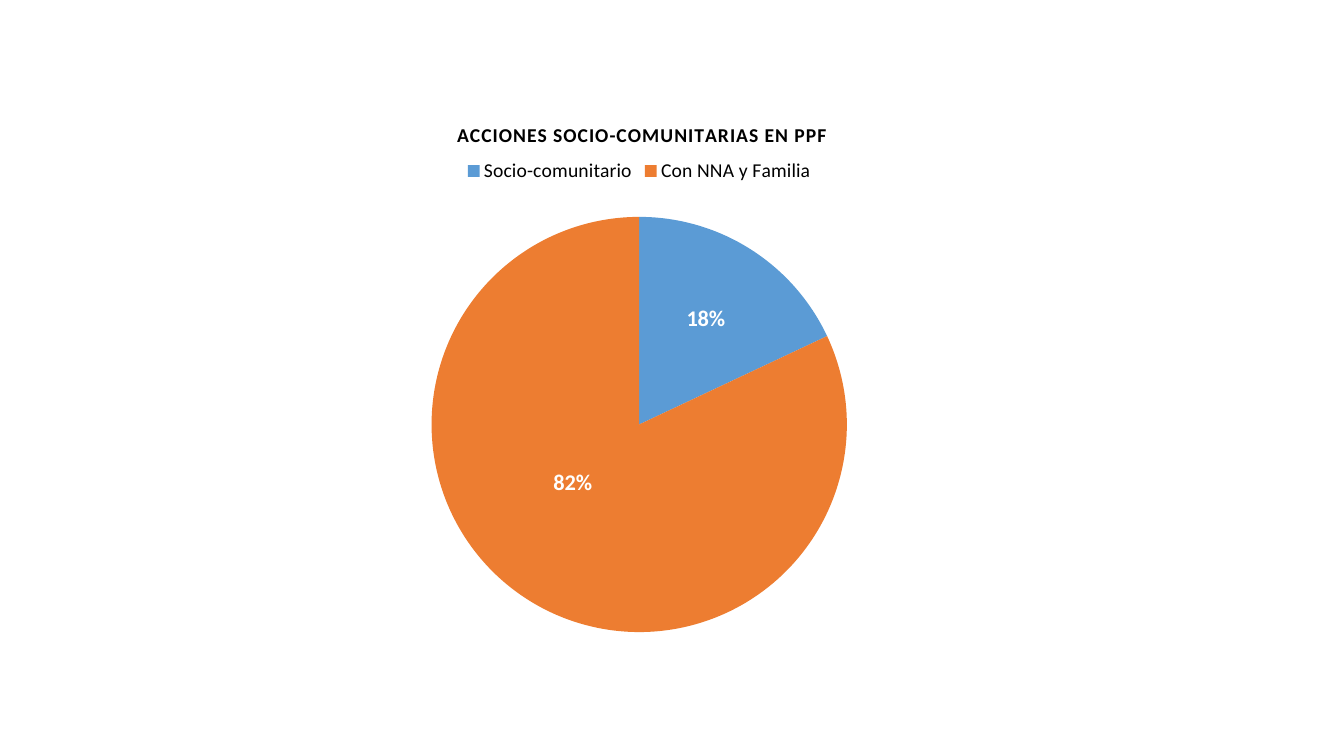
"""Build a slide with a pie chart of the socio-community actions in PPF."""
from lxml.etree import SubElement
from pptx import Presentation
from pptx.chart.data import CategoryChartData
from pptx.dml.color import RGBColor
from pptx.enum.chart import XL_CHART_TYPE as ChartType, XL_LABEL_POSITION as LabelPosition
from pptx.enum.chart import XL_LEGEND_POSITION as LegendPosition
from pptx.oxml.ns import qn
from pptx.util import Inches, Pt


def style_font(font, size, color, bold=False):
    font.name = "Calibri"
    font.size = Pt(size)
    font.bold = bold
    font.color.rgb = RGBColor.from_string(color)


def place(parent, after, **settings):
    for old in parent.findall(qn("c:layout")):
        parent.remove(old)
    layout = SubElement(parent, qn("c:layout"))
    manual = SubElement(layout, qn("c:manualLayout"))
    for tag, value in settings.items():
        SubElement(manual, qn(f"c:{tag}")).set("val", str(value))
    if after is None:
        parent.insert(0, layout)
    else:
        after.addnext(layout)


deck = Presentation()
deck.slide_width, deck.slide_height = Inches(13.33), Inches(7.5)
page = deck.slides.add_slide(deck.slide_layouts[6])

data = CategoryChartData()
data.categories = ["Socio-comunitario", "Con NNA y Familia"]
data.add_series("Series 1", (18, 82))
chart = page.shapes.add_chart(
    ChartType.PIE, Inches(0.92), Inches(0.94), Inches(10.84), Inches(5.69), data
).chart
style_font(chart.font, 10, "000000")

chart.has_title = True
para = chart.chart_title.text_frame.paragraphs[0]
para.text = "ACCIONES SOCIO-COMUNITARIAS EN PPF"
style_font(para.font, 14, "000000", True)
para.runs[0].font.size = Pt(14)
para.runs[0].font.bold = True
for properties in para._p.iter(qn("a:defRPr"), qn("a:rPr")):
    properties.set("spc", "60")
title = chart.chart_title._element
place(title, title.find(qn("c:tx")), xMode="edge", yMode="edge", x=0.33, y=0.04)

chart.has_legend = True
legend = chart.legend
legend.position = LegendPosition.TOP
legend.include_in_layout = False
style_font(legend.font, 14, "000000")

plot = chart.plots[0]
plot.vary_by_categories = True
place(plot._element.getparent(), None, layoutTarget="inner", xMode="edge", yMode="edge",
      x=0.31, y=0.21, w=0.38, h=0.73)

slices = [("5B9BD5", 0.01, -0.03), ("ED7D31", -0.01, -0.05)]
for index, (color, shift_x, shift_y) in enumerate(slices):
    point = plot.series[0].points[index]
    point.format.fill.solid()
    point.format.fill.fore_color.rgb = RGBColor.from_string(color)
    point.format.line.fill.background()
    label = point.data_label
    style_font(label.font, 16, "FFFFFF", True)
    label.position = LabelPosition.CENTER
    element = label._get_or_add_dLbl()
    element.find(qn("c:showVal")).set("val", "0")
    element.find(qn("c:showPercent")).set("val", "1")
    place(element, element.find(qn("c:idx")), x=shift_x, y=shift_y)

labels = plot.series[0].data_labels
labels.show_value = False
labels.show_percentage = True
labels.position = LabelPosition.CENTER
style_font(labels.font, 16, "FFFFFF", True)

deck.save("out.pptx")
